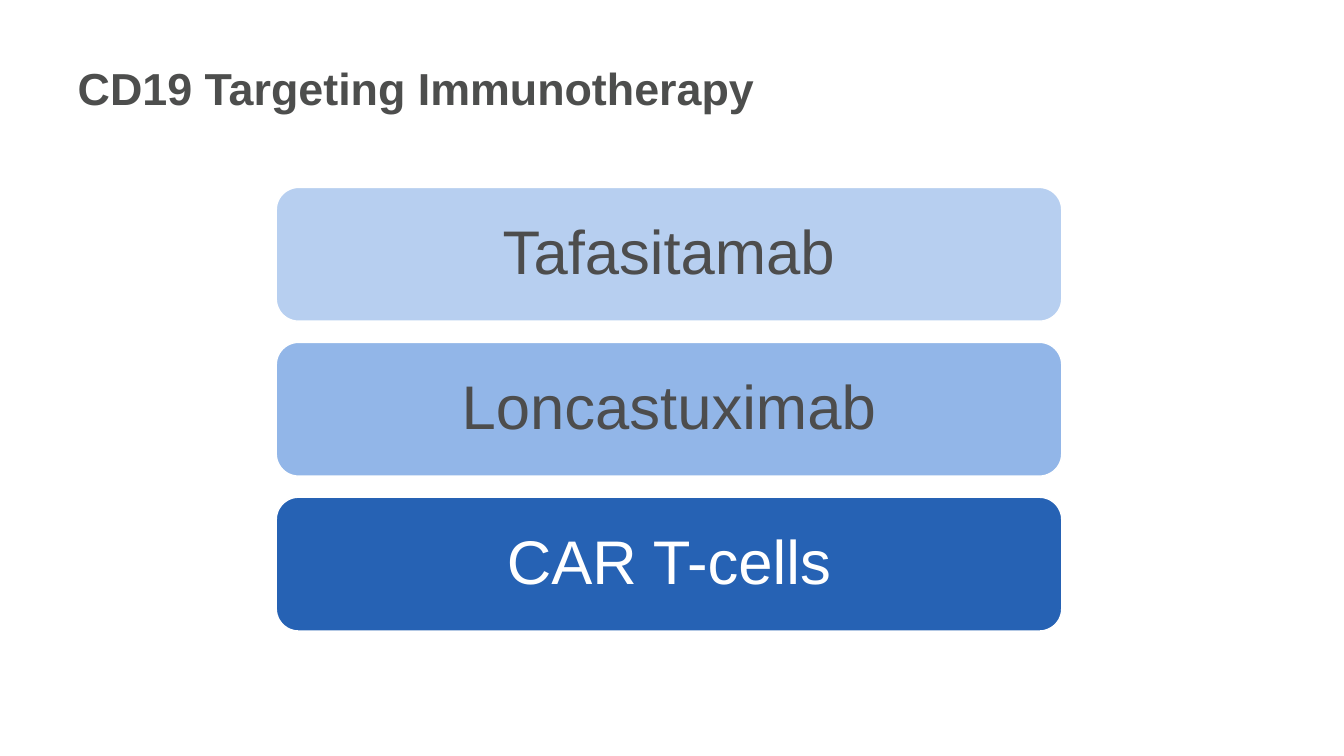
from dataclasses import dataclass

from pptx import Presentation
from pptx.dml.color import RGBColor
from pptx.enum.shapes import MSO_SHAPE
from pptx.enum.text import MSO_ANCHOR, PP_ALIGN
from pptx.util import Inches, Pt


@dataclass(frozen=True)
class Theme:
    font: str = "Arial"
    title_size: int = 32
    bar_size: int = 44
    title: str = "4D4E4D"
    dark: str = "4D4D4D"
    white: str = "FFFFFF"
    light_blue: str = "B7CFF0"
    mid_blue: str = "92B6E8"
    deep_blue: str = "2662B4"


THEME = Theme()

THERAPIES = [
    ("Tafasitamab", THEME.light_blue, THEME.dark),
    ("Loncastuximab", THEME.mid_blue, THEME.dark),
    ("CAR T-cells", THEME.deep_blue, THEME.white),
]


def add_run(p, text, size, color, bold=False):
    r = p.add_run()
    r.text = text
    r.font.name = THEME.font
    r.font.size = Pt(size)
    r.font.bold = bold
    r.font.color.rgb = RGBColor.from_string(color)


def set_title(slide, text, left, top, width, height):
    sp = slide.shapes.title
    sp.left, sp.top = Inches(left), Inches(top)
    sp.width, sp.height = Inches(width), Inches(height)
    tf = sp.text_frame
    tf.word_wrap = True
    tf.vertical_anchor = MSO_ANCHOR.MIDDLE
    p = tf.paragraphs[0]
    p.alignment = PP_ALIGN.LEFT
    add_run(p, text, THEME.title_size, THEME.title, bold=True)


def add_bar(slide, text, fill, color, left, top, width, height):
    sp = slide.shapes.add_shape(
        MSO_SHAPE.ROUNDED_RECTANGLE,
        Inches(left), Inches(top), Inches(width), Inches(height))
    sp.shadow.inherit = False
    sp.fill.solid()
    sp.fill.fore_color.rgb = RGBColor.from_string(fill)
    sp.line.color.rgb = RGBColor.from_string(THEME.white)
    sp.line.width = Pt(1)
    tf = sp.text_frame
    tf.word_wrap = True
    tf.vertical_anchor = MSO_ANCHOR.MIDDLE
    tf.margin_left = tf.margin_right = Inches(0.18)
    tf.margin_top = tf.margin_bottom = Inches(0.18)
    p = tf.paragraphs[0]
    p.alignment = PP_ALIGN.CENTER
    p.line_spacing = 0.9
    add_run(p, text, THEME.bar_size, color)


def add_therapy_stack(slide, therapies, left, top, width, height, gap=0.21):
    """Stack equal bars so that they fill the box."""
    n = len(therapies)
    bar_height = (height - gap * (n - 1)) / n
    for i, (text, fill, color) in enumerate(therapies):
        add_bar(slide, text, fill, color,
                left, top + i * (bar_height + gap), width, bar_height)


def main():
    prs = Presentation()
    prs.slide_width, prs.slide_height = Inches(13.33), Inches(7.5)
    slide = prs.slides.add_slide(prs.slide_layouts[5])

    # Title
    set_title(slide, "CD19 Targeting Immunotherapy", 0.67, 0.22, 11.75, 1.3)

    # Therapy bars
    add_therapy_stack(slide, THERAPIES, 2.74, 1.86, 7.79, 4.4)

    prs.save("out.pptx")


if __name__ == "__main__":
    main()
